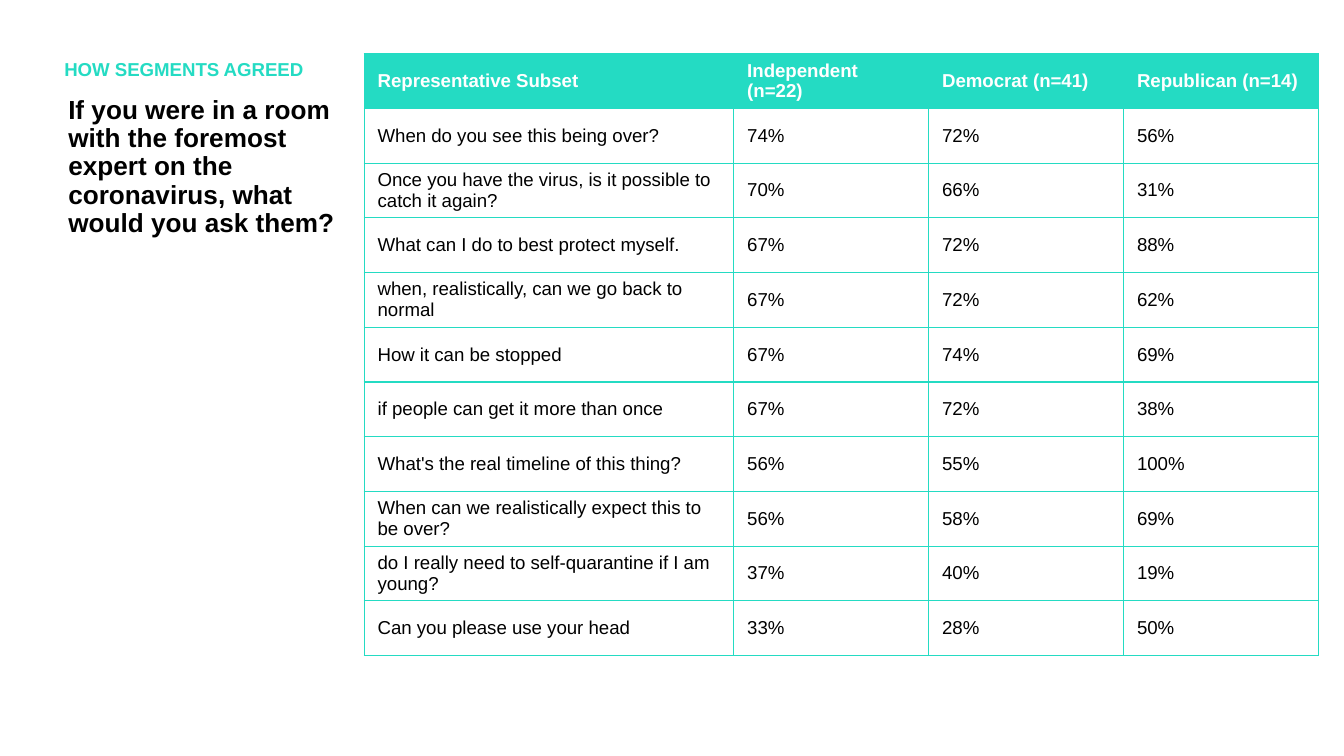
from lxml import etree
from pptx import Presentation
from pptx.dml.color import RGBColor
from pptx.enum.text import MSO_ANCHOR
from pptx.oxml.ns import qn
from pptx.util import Inches, Pt

MIDDLE = MSO_ANCHOR.MIDDLE
TEAL, WHITE, BLACK = "24DBC3", "FFFFFF", "000000"

# Content
HEADING = "HOW SEGMENTS AGREED"
QUESTION = ("If you were in a room with the foremost expert on the coronavirus, "
            "what would you ask them?")
ROWS = [
    ("Representative Subset", "Independent (n=22)", "Democrat (n=41)", "Republican (n=14)"),
    ("When do you see this being over?", "74%", "72%", "56%"),
    ("Once you have the virus, is it possible to catch it again?", "70%", "66%", "31%"),
    ("What can I do to best protect myself.", "67%", "72%", "88%"),
    ("when, realistically, can we go back to normal", "67%", "72%", "62%"),
    ("How it can be stopped", "67%", "74%", "69%"),
    ("if people can get it more than once", "67%", "72%", "38%"),
    ("What's the real timeline of this thing?", "56%", "55%", "100%"),
    ("When can we realistically expect this to be over?", "56%", "58%", "69%"),
    ("do I really need to self-quarantine if I am young?", "37%", "40%", "19%"),
    ("Can you please use your head", "33%", "28%", "50%"),
]
COLUMN_WIDTHS = [2.75, 1.45, 1.45, 1.45]
TABLE_HEIGHT = 4.48


def rgb(value):
    return RGBColor.from_string(value)


def write(frame, text, size=10, color=BLACK, bold=False, line_spacing=None):
    para = frame.paragraphs[0]
    if line_spacing:
        para.line_spacing = line_spacing
    span = para.add_run()
    span.text = text
    span.font.name = "Arial"
    span.font.size = Pt(size)
    span.font.bold = bold
    span.font.color.rgb = rgb(color)


def add_text(page, left, top, width, height, text, **style):
    box = page.shapes.add_textbox(Inches(left), Inches(top), Inches(width), Inches(height))
    box.text_frame.word_wrap = True
    write(box.text_frame, text, bold=True, line_spacing=0.9, **style)


def add_borders(cell, color, width):
    """Line all four sides; the lines must come before the cell's fill."""
    properties = cell._tc.get_or_add_tcPr()
    for index, side in enumerate(("lnL", "lnR", "lnT", "lnB")):
        line = etree.Element(qn("a:" + side), w=str(Pt(width)))
        fill = etree.SubElement(line, qn("a:solidFill"))
        etree.SubElement(fill, qn("a:srgbClr"), val=color)
        properties.insert(index, line)


# Widescreen page, 16 to 9
deck = Presentation()
deck.slide_width = Inches(10)
deck.slide_height = Inches(10 * 9 / 16)
page = deck.slides.add_slide(deck.slide_layouts[6])

# Question and heading on the left
add_text(page, 0.41, 0.67, 2.3, 4.41, QUESTION, size=14)
add_text(page, 0.38, 0.4, 2.32, 0.28, HEADING, color=TEAL)

# Agreement table
table = page.shapes.add_table(
    len(ROWS), len(COLUMN_WIDTHS), Inches(2.71), Inches(0.4),
    Inches(sum(COLUMN_WIDTHS)), Inches(TABLE_HEIGHT)).table
for column, width in zip(table.columns, COLUMN_WIDTHS):
    column.width = Inches(width)
for row_index, row in enumerate(ROWS):
    is_header = row_index == 0
    table.rows[row_index].height = Inches(TABLE_HEIGHT / len(ROWS))
    for column_index, text in enumerate(row):
        cell = table.cell(row_index, column_index)
        cell.vertical_anchor = MIDDLE
        cell.margin_top = cell.margin_bottom = Inches(0.03)
        cell.fill.solid()
        cell.fill.fore_color.rgb = rgb(TEAL if is_header else WHITE)
        write(cell.text_frame, text, color=WHITE if is_header else BLACK, bold=is_header)
        add_borders(cell, TEAL, 0.75)

deck.save("out.pptx")
